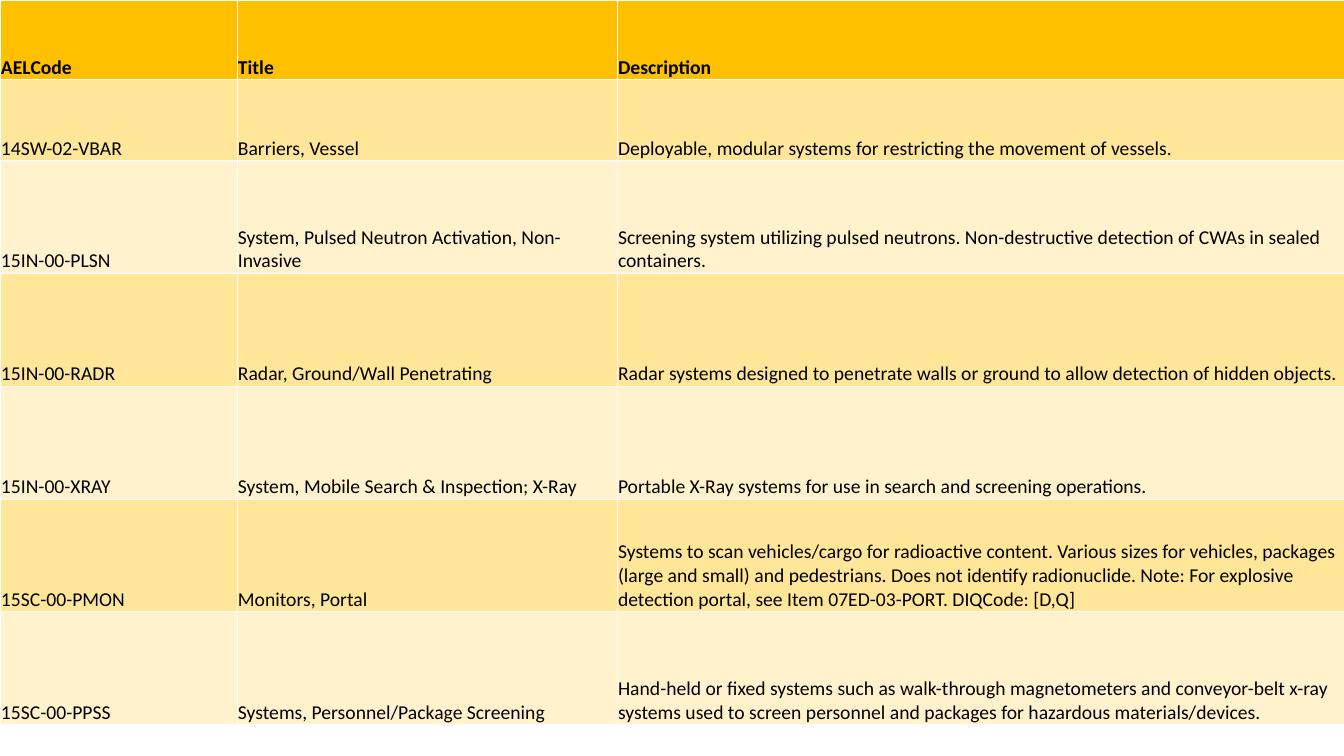
import pptx
import pptx.dml.color
import pptx.enum.text
import pptx.oxml
import pptx.oxml.ns
import pptx.util

ROWS = [
    ("AELCode", "Title", "Description"),
    ("14SW-02-VBAR", "Barriers, Vessel",
     "Deployable, modular systems for restricting the movement of vessels."),
    ("15IN-00-PLSN", "System, Pulsed Neutron Activation, Non-Invasive",
     "Screening system utilizing pulsed neutrons. Non-destructive detection of "
     "CWAs in sealed containers."),
    ("15IN-00-RADR", "Radar, Ground/Wall Penetrating",
     "Radar systems designed to penetrate walls or ground to allow detection of "
     "hidden objects."),
    ("15IN-00-XRAY", "System, Mobile Search & Inspection; X-Ray",
     "Portable X-Ray systems for use in search and screening operations."),
    ("15SC-00-PMON", "Monitors, Portal",
     "Systems to scan vehicles/cargo for radioactive content. Various sizes for "
     "vehicles, packages (large and small) and pedestrians. Does not identify "
     "radionuclide. Note: For explosive detection portal, see Item 07ED-03-PORT. "
     "DIQCode: [D,Q]"),
    ("15SC-00-PPSS", "Systems, Personnel/Package Screening",
     "Hand-held or fixed systems such as walk-through magnetometers and "
     "conveyor-belt x-ray systems used to screen personnel and packages for "
     "hazardous materials/devices."),
]
COLORS = {"header": "FFC000", "odd": "FFE699", "even": "FFF2CC",
          "border": "FFFFFF", "text": "000000"}
SLIDE_WIDTH, SLIDE_HEIGHT = 13.33, 7.5
COLUMN_WIDTHS = [2.35, 3.77, 7.21]
ROW_HEIGHTS = [0.79, 0.8] + [1.12] * 5
INSET = 0.01


def rgb(name):
    return pptx.dml.color.RGBColor.from_string(COLORS[name])


def add_borders(cell):
    """Draw thin lines on all four sides, placed ahead of the fill."""
    properties = cell._tc.get_or_add_tcPr()
    for position, side in enumerate("LRTB"):
        line = pptx.oxml.parse_xml(
            f'<a:ln{side} {pptx.oxml.ns.nsdecls("a")} w="{pptx.util.Pt(0.5)}">'
            f'<a:solidFill><a:srgbClr val="{COLORS["border"]}"/></a:solidFill>'
            f'</a:ln{side}>')
        properties.insert(position, line)


def fill_cell(cell, text, band):
    cell.fill.solid()
    cell.fill.fore_color.rgb = rgb(band)
    add_borders(cell)
    cell.margin_left = cell.margin_right = cell.margin_top = pptx.util.Inches(INSET)
    cell.margin_bottom = 0
    cell.vertical_anchor = pptx.enum.text.MSO_ANCHOR.BOTTOM
    span = cell.text_frame.paragraphs[0].add_run()
    span.text = text
    span.font.name = "Calibri"
    span.font.size = pptx.util.Pt(14)
    span.font.bold = band == "header"
    span.font.color.rgb = rgb("text")


def main():
    deck = pptx.Presentation()
    deck.slide_width = pptx.util.Inches(SLIDE_WIDTH)
    deck.slide_height = pptx.util.Inches(SLIDE_HEIGHT)
    page = deck.slides.add_slide(deck.slide_layouts[6])
    table = page.shapes.add_table(
        len(ROWS), len(COLUMN_WIDTHS), 0, 0,
        pptx.util.Inches(sum(COLUMN_WIDTHS)),
        pptx.util.Inches(sum(ROW_HEIGHTS))).table
    for column, width in zip(table.columns, COLUMN_WIDTHS):
        column.width = pptx.util.Inches(width)
    for row, height in zip(table.rows, ROW_HEIGHTS):
        row.height = pptx.util.Inches(height)
    for row_index, texts in enumerate(ROWS):
        band = "header" if row_index == 0 else ("even", "odd")[row_index % 2]
        for column_index, text in enumerate(texts):
            fill_cell(table.cell(row_index, column_index), text, band)
    deck.save("out.pptx")


if __name__ == "__main__":
    main()
